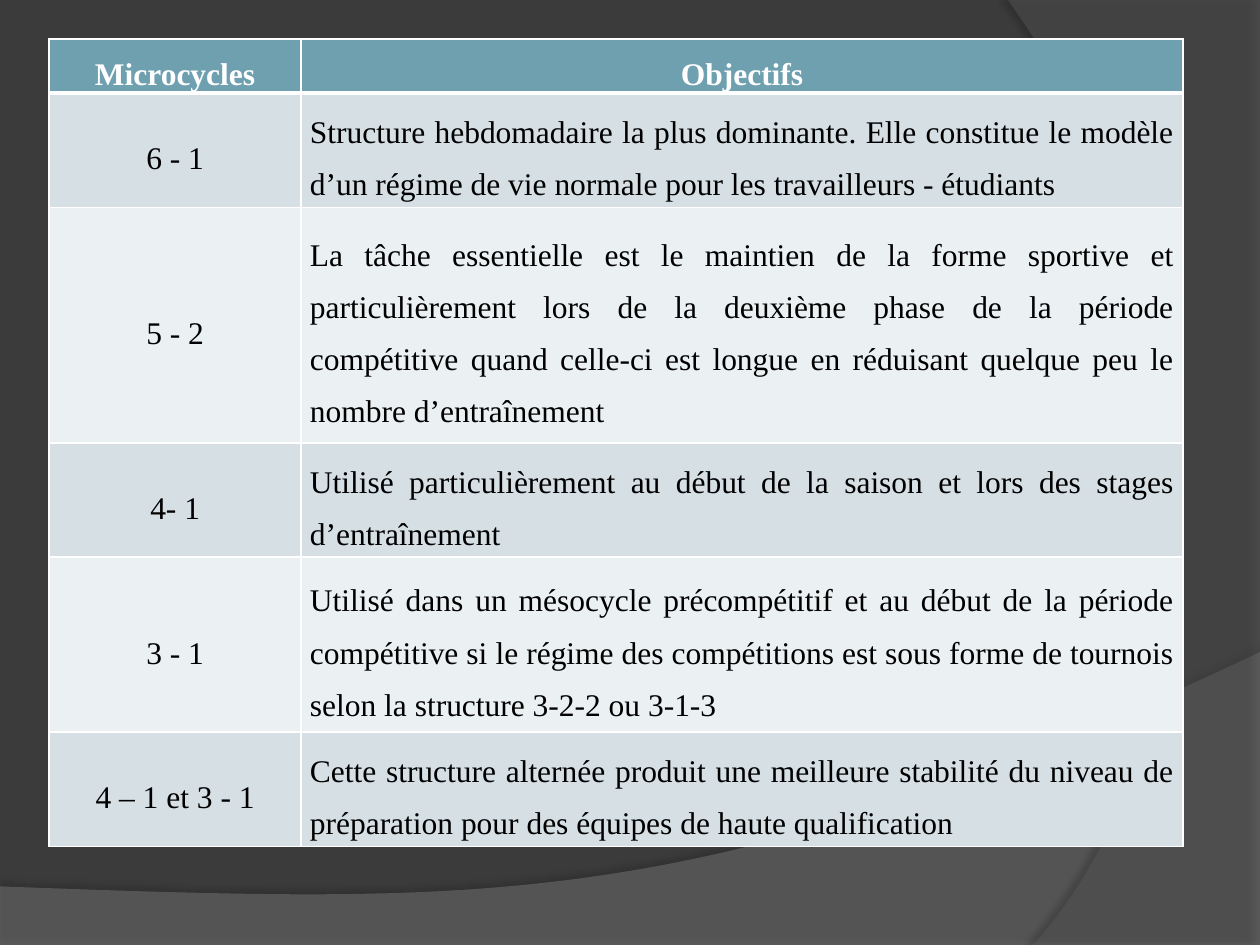
from dataclasses import dataclass
from lxml.etree import SubElement
from pptx import Presentation
from pptx.dml.color import RGBColor
from pptx.enum.text import MSO_ANCHOR, PP_ALIGN
from pptx.oxml.ns import qn
from pptx.util import Inches, Pt


@dataclass(frozen=True)
class Theme:
    back: str = "3B3B3B"
    wave: str = "7F7F7F"
    sweep: str = "5E5E5E"
    head: str = "6EA0B0"
    bands: tuple = ("D5DFE4", "EBF0F2")
    light: str = "FFFFFF"
    dark: str = "000000"
    font: str = "Times New Roman"
    size: int = 18
    thin: int = 1
    thick: int = 3


THEME = Theme()
WIDE, HIGH = 10, 7.5
ROWS = [
    ("Microcycles", "Objectifs", 0.43),
    ("6 - 1", "Structure hebdomadaire la plus dominante. Elle constitue le "
     "modèle d’un régime de vie normale pour les travailleurs - étudiants", 0.91),
    ("5 - 2", "La tâche essentielle est le maintien de la forme sportive et "
     "particulièrement lors de la deuxième phase de la période compétitive "
     "quand celle-ci est longue en réduisant quelque peu le nombre "
     "d’entraînement", 1.87),
    ("4- 1", "Utilisé particulièrement au début de la saison et lors des "
     "stages d’entraînement", 0.91),
    ("3 - 1", "Utilisé dans un mésocycle précompétitif et au début de la "
     "période compétitive si le régime des compétitions est sous forme de "
     "tournois selon la structure 3-2-2 ou 3-1-3", 1.39),
    ("4 – 1 et 3 - 1", "Cette structure alternée produit une meilleure "
     "stabilité du niveau de préparation pour des équipes de haute "
     "qualification", 0.91),
]


def color(code):
    return RGBColor.from_string(code)


def curve(a, b, c, d, steps=40):
    """Points along a cubic curve, after its start."""
    for i in range(1, steps + 1):
        t = i / steps
        u = 1 - t
        yield tuple(u**3 * p + 3 * u * u * t * q + 3 * u * t * t * r + t**3 * s
                    for p, q, r, s in zip(a, b, c, d))


def set_alpha(node, share):
    SubElement(node, qn("a:alpha"), val=str(share * 1000))


def add_blade(slide, box, edge, bend, fill, alpha, shade):
    """Translucent shape: straight edge, then a curve; points are box shares."""
    left, top, wide, high = box
    points = [*edge, *curve(edge[-1], *bend)]
    spots = [(Inches(left + x * wide), Inches(top + y * high)) for x, y in points]
    build = slide.shapes.build_freeform(*spots[0], scale=1.0)
    build.add_line_segments(spots[1:], close=True)
    shape = build.convert_to_shape()
    shape.line.fill.background()
    shape.fill.solid()
    shape.fill.fore_color.rgb = color(fill)
    props = shape.element.spPr
    set_alpha(props.find(".//" + qn("a:srgbClr")), alpha)
    # Soft shadow
    shape.shadow.inherit = False
    depth, blur, dist, angle = shade
    outer = SubElement(props.find(qn("a:effectLst")), qn("a:outerShdw"),
                       blurRad=str(Pt(blur)), dist=str(Pt(dist)),
                       dir=str(angle * 60000), algn="ctr", rotWithShape="0")
    set_alpha(SubElement(outer, qn("a:srgbClr"), val=THEME.dark), depth)


def add_back(slide, box):
    left, top, wide, high = box
    slide.background.fill.solid()
    slide.background.fill.fore_color.rgb = color(THEME.back)
    # Wave along the bottom
    add_blade(slide, (left, top + 0.69 * high, wide, 0.31 * high),
              [(0, 0.8), (0, 1), (1, 1), (1, 0)],
              [(0.56, 0.9), (0.39, 0.86), (0, 0.8)],
              THEME.wave, 45, (35, 4, 3.5, 270))
    # Sweep down the right side
    add_blade(slide, (left + 0.8 * wide, top, 0.2 * wide, high),
              [(0, 0), (1, 0), (1, 1), (0.1, 1)],
              [(0.68, 0.83), (1.09, 0.41), (0, 0)],
              THEME.sweep, 40, (45, 4, 4, 180))


def add_edges(cell, widths):
    props = cell._tc.get_or_add_tcPr()
    for side, width in zip("LRTB", widths):
        line = SubElement(props, qn("a:ln" + side), w=str(Pt(width)))
        SubElement(SubElement(line, qn("a:solidFill")), qn("a:srgbClr"),
                   val=THEME.light)


def fill_cell(cell, text, row, col):
    head = row == 0
    thin, thick = THEME.thin, THEME.thick
    add_edges(cell, (thin, thin, thick if row == 1 else thin,
                     thick if head else thin))
    cell.fill.solid()
    cell.fill.fore_color.rgb = color(THEME.head if head else THEME.bands[(row - 1) % 2])
    cell.vertical_anchor = MSO_ANCHOR.MIDDLE
    cell.margin_left = cell.margin_right = Inches(0.07)
    cell.margin_top = cell.margin_bottom = 0
    para = cell.text_frame.paragraphs[0]
    para.alignment = PP_ALIGN.JUSTIFY if col and not head else PP_ALIGN.CENTER
    para.line_spacing = 1.5
    run = para.add_run()
    run.text = text
    run.font.name, run.font.size = THEME.font, Pt(THEME.size)
    run.font.bold = head
    run.font.color.rgb = color(THEME.light if head else THEME.dark)


def add_grid(slide, box):
    left, top, wide, high = box
    frame = slide.shapes.add_table(len(ROWS), 2, *map(Inches, box))
    table = frame.table
    for col, share in enumerate((2 / 9, 7 / 9)):
        table.columns[col].width = Inches(wide * share)
    total = sum(row[-1] for row in ROWS)
    for i, (*texts, tall) in enumerate(ROWS):
        table.rows[i].height = Inches(high * tall / total)
        for col, text in enumerate(texts):
            fill_cell(table.cell(i, col), text, i, col)


def main():
    deck = Presentation()
    deck.slide_width, deck.slide_height = Inches(WIDE), Inches(HIGH)
    slide = deck.slides.add_slide(deck.slide_layouts[6])
    add_back(slide, (0, 0, WIDE, HIGH))
    add_grid(slide, (0.39, 0.31, 9, 6.41))
    deck.save("out.pptx")


if __name__ == "__main__":
    main()
